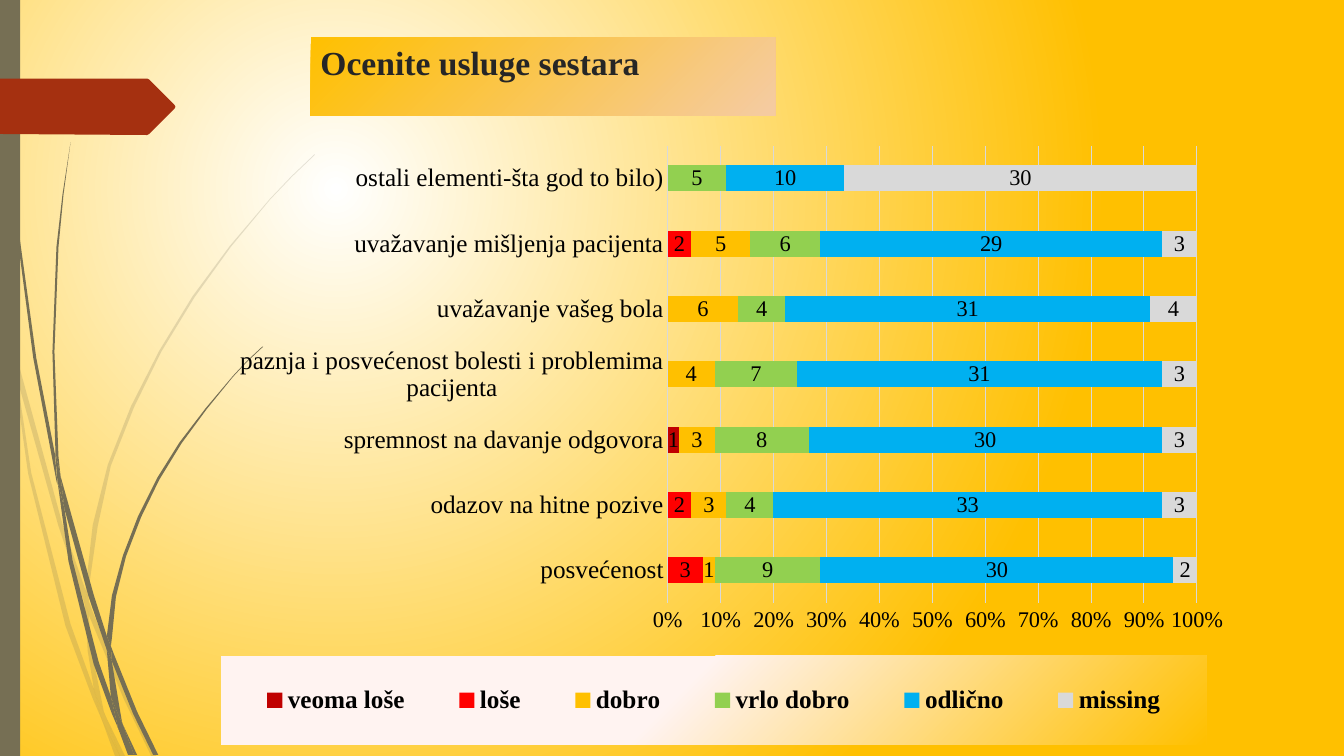
import pptx
import pptx.chart.data
import pptx.dml.color
import pptx.enum.chart
import pptx.enum.shapes
import pptx.enum.text
import pptx.oxml
import pptx.oxml.ns
import pptx.util

Inches, Pt, qn = pptx.util.Inches, pptx.util.Pt, pptx.oxml.ns.qn
RGB = pptx.dml.color.RGBColor.from_string
FONT = "Times New Roman"
COLORS = {
    "white": "FFFFFF", "gold": "FFC000", "peach": "F5CBA0", "olive": "766F54", "rust": "A53010",
    "heading": "262626", "text": "000000", "grid": "D9D9D9", "blush": "FFF3F1",
    "veoma loše": "C00000", "loše": "FF0000", "dobro": "FFC000",
    "vrlo dobro": "92D050", "odlično": "00B0F0", "missing": "D9D9D9",
}


def set_circle_gradient(fill, parent, inner, start, outer, center):
    """Radial gradient from the inner to the outer colour; center is l, t, r, b in percent."""
    fill.gradient()
    for stop, color, position in zip(fill.gradient_stops, (inner, outer), (start, 1)):
        stop.color.rgb = RGB(COLORS[color])
        stop.position = position
    gradient = parent.find(qn("a:gradFill"))
    left, top, right, bottom = (value * 1000 for value in center)
    gradient.replace(gradient.find(qn("a:lin")), pptx.oxml.parse_xml(
        f'<a:path {pptx.oxml.ns.nsdecls("a")} path="circle">'
        f'<a:fillToRect l="{left}" t="{top}" r="{right}" b="{bottom}"/></a:path>'))


def add_outline(shapes, points, color):
    """Closed filled outline through points in inches."""
    corners = [(Inches(x), Inches(y)) for x, y in points]
    builder = shapes.build_freeform(*corners[0], scale=1)
    builder.add_line_segments(corners[1:], close=True)
    shape = builder.convert_to_shape()
    shape.shadow.inherit = False
    shape.fill.solid()
    shape.fill.fore_color.rgb = RGB(COLORS[color])
    shape.line.fill.background()
    return shape


presentation = pptx.Presentation()
presentation.slide_width, presentation.slide_height = Inches(13.33), Inches(7.5)
slide = presentation.slides.add_slide(presentation.slide_layouts[6])

# Background
background_fill = slide.background.fill
set_circle_gradient(background_fill, slide.element.cSld.find(qn("p:bg")).find(qn("p:bgPr")),
                    "white", 0, "gold", (50, 50, 100, 100))

# Grass blades: pale group, then dark group
pale_blades = [
    [(0.11, 3.5), (0.09, 3.22), (0, 2.82), (0, 2.99), (0.1, 3.44)],
    [(0.58, 5.22), (0.84, 5.99), (0.85, 5.86), (0.62, 5.2), (0.14, 3.45), (0.17, 3.76)],
    [(0.92, 6.07), (0.88, 5.96), (0.88, 6.1), (1.23, 6.94), (1.5, 7.5), (1.55, 7.5), (1.27, 6.92)],
    [(1.19, 7.5), (1.24, 7.5), (1.05, 7.11)],
    [(0.93, 6.83), (0.7, 6.19), (0.31, 4.69), (0.17, 3.76), (0.11, 3.5), (0.28, 4.7),
     (0.65, 6.21), (0.92, 6.93), (1.01, 7.14), (0.99, 7.07)],
    [(0.84, 5.99), (0.87, 6.46), (0.93, 6.83), (0.96, 6.92), (1.05, 7.11), (1.03, 7.06),
     (0.91, 6.46), (0.88, 6.1), (0.88, 6.08)],
    [(0.88, 5.84), (0.97, 5.22), (1.1, 4.62), (1.33, 4.04), (1.6, 3.49), (1.93, 2.95),
     (2.29, 2.45), (2.68, 1.98), (2.9, 1.75), (3.12, 1.54), (3.12, 1.53), (2.89, 1.75),
     (2.68, 1.97), (2.28, 2.44), (1.91, 2.94), (1.58, 3.48), (1.3, 4.03), (1.07, 4.61),
     (0.92, 5.21), (0.85, 5.84), (0.85, 5.86), (0.88, 5.96)],
    [(1.01, 7.14), (1.14, 7.5), (1.19, 7.5)],
    [(0.88, 6.08), (0.88, 6.1), (0.88, 5.96), (0.85, 5.86), (0.84, 5.99)],
    [(0.96, 6.92), (0.93, 6.83), (0.99, 7.07), (1.01, 7.14), (1.19, 7.5), (1.05, 7.11)],
]
dark_blades = [
    [(0.07, 1.1), (0.17, 2.33), (0.33, 3.55), (0.56, 4.77), (0.57, 4.81), (0.55, 4.57),
     (0.55, 4.53), (0.36, 3.55), (0.19, 2.32), (0.08, 1.09), (0.05, 0.48), (0.04, 0),
     (0.03, 0), (0.04, 0.48)],
    [(0.88, 5.92), (1.06, 6.45), (1.06, 6.33), (1.06, 6.31), (0.93, 5.9), (0.6, 4.72),
     (0.64, 5.05)],
    [(1.13, 6.49), (1.1, 6.41), (1.11, 6.56), (1.32, 7.08), (1.52, 7.49), (1.57, 7.49),
     (1.36, 7.06)],
    [(1.1, 6.91), (0.98, 6.57), (0.72, 5.56), (0.64, 5.05), (0.57, 4.77), (0.68, 5.57),
     (0.93, 6.59), (1.11, 7.08), (1.17, 7.22), (1.16, 7.17)],
    [(0.6, 4.72), (0.58, 4.53), (0.54, 3.49), (0.58, 2.45), (0.63, 1.93), (0.7, 1.41),
     (0.62, 1.93), (0.56, 2.45), (0.52, 3.49), (0.55, 4.49)],
    [(1.33, 7.49), (1.36, 7.49), (1.22, 7.19)],
    [(0.57, 4.77), (0.64, 5.05), (0.6, 4.72), (0.55, 4.49), (0.55, 4.53)],
    [(1.11, 6.33), (1.15, 5.92), (1.25, 5.52), (1.4, 5.13), (1.58, 4.76), (1.8, 4.4),
     (2.05, 4.06), (2.31, 3.74), (2.45, 3.59), (2.61, 3.44), (2.6, 3.44), (2.45, 3.58),
     (2.31, 3.73), (2.04, 4.05), (1.78, 4.39), (1.56, 4.74), (1.37, 5.12), (1.22, 5.51),
     (1.11, 5.91), (1.06, 6.31), (1.1, 6.41)],
    [(1.17, 7.22), (1.27, 7.49), (1.31, 7.49)],
    [(1.06, 6.45), (1.1, 6.91), (1.16, 7.06), (1.22, 7.19), (1.21, 7.16), (1.11, 6.56),
     (1.09, 6.51)],
    [(1.06, 6.45), (1.09, 6.51), (1.11, 6.56), (1.1, 6.41), (1.06, 6.31), (1.06, 6.33)],
    [(1.16, 7.06), (1.1, 6.91), (1.16, 7.17), (1.17, 7.22), (1.3, 7.49), (1.33, 7.49),
     (1.22, 7.19)],
]
for blades, opacity in ((pale_blades, 20), (dark_blades, 100)):
    group = slide.shapes.add_group_shape()
    for points in blades:
        blade = add_outline(group.shapes, points, "olive")
        if opacity < 100:
            color = blade.fill._xPr.find(qn("a:solidFill")).find(qn("a:srgbClr"))
            color.append(pptx.oxml.parse_xml(
                f'<a:alpha {pptx.oxml.ns.nsdecls("a")} val="{opacity * 1000}"/>'))

# Side bar and arrow tab
bar = slide.shapes.add_shape(pptx.enum.shapes.MSO_SHAPE.RECTANGLE, 0, 0, Inches(0.2), Inches(7.5))
bar.shadow.inherit = False
bar.fill.solid()
bar.fill.fore_color.rgb = RGB(COLORS["olive"])
bar.line.fill.background()
add_outline(slide.shapes, [(0, 0.78), (1.46, 0.78), (1.48, 0.79), (1.73, 1.04), (1.74, 1.06),
                           (1.73, 1.08), (1.48, 1.33), (1.46, 1.34), (0, 1.33)], "rust")

# Title
title = slide.shapes.add_textbox(Inches(3.08), Inches(0.37), Inches(4.61), Inches(0.78))
set_circle_gradient(title.fill, title.element.spPr, "peach", 0.02, "gold", (100, 100, 0, 0))
title.text_frame.word_wrap = True
title.text_frame.vertical_anchor = pptx.enum.text.MSO_ANCHOR.TOP
paragraph = title.text_frame.paragraphs[0]
paragraph.text = "Ocenite usluge sestara"
paragraph.font.name, paragraph.font.size, paragraph.font.bold = FONT, Pt(24), True
paragraph.font.color.rgb = RGB(COLORS["heading"])

# Chart of ratings
ratings = pptx.chart.data.CategoryChartData()
ratings.categories = [
    "posvećenost", "odazov na hitne pozive", "spremnost na davanje odgovora",
    "paznja i posvećenost bolesti i problemima pacijenta", "uvažavanje vašeg bola",
    "uvažavanje mišljenja pacijenta", "ostali elementi-šta god to bilo)"]
for name, values in {
    "veoma loše": (None, None, 1, None, None, None, None),
    "loše": (3, 2, None, None, None, 2, None),
    "dobro": (1, 3, 3, 4, 6, 5, None),
    "vrlo dobro": (9, 4, 8, 7, 4, 6, 5),
    "odlično": (30, 33, 30, 31, 31, 29, 10),
    "missing": (2, 3, 3, 3, 4, 3, 30),
}.items():
    ratings.add_series(name, values)
chart = slide.shapes.add_chart(
    pptx.enum.chart.XL_CHART_TYPE.BAR_STACKED_100,
    Inches(1.75), Inches(1.29), Inches(10.5), Inches(6.21), ratings).chart
chart.has_title = False
chart.has_legend = True
legend = chart.legend
legend.position = pptx.enum.chart.XL_LEGEND_POSITION.BOTTOM
legend.include_in_layout = False
legend.font.bold = True
plot = chart.plots[0]
plot.gap_width, plot.overlap, plot.vary_by_categories = 150, 100, False
label_fonts = []
for series in plot.series:
    series.format.fill.solid()
    series.format.fill.fore_color.rgb = RGB(COLORS[series.name])
    labels = series.data_labels
    labels.show_value = True
    labels.position = pptx.enum.chart.XL_LABEL_POSITION.CENTER
    label_fonts.append(labels.font)

# Axes and chart fonts
category_axis, value_axis = chart.category_axis, chart.value_axis
for axis in (category_axis, value_axis):
    axis.major_tick_mark = axis.minor_tick_mark = pptx.enum.chart.XL_TICK_MARK.NONE
category_axis.has_major_gridlines = False
value_axis.has_major_gridlines = True
value_axis.minimum_scale, value_axis.maximum_scale, value_axis.major_unit = 0, 1, 0.1
value_axis.tick_labels.number_format = "0%"
value_axis.tick_labels.number_format_is_linked = False
value_axis.format.line.fill.background()
for line in (category_axis.format.line, value_axis.major_gridlines.format.line):
    line.color.rgb = RGB(COLORS["grid"])
    line.width = Pt(0.75)
small_fonts = [chart.font, value_axis.tick_labels.font, *label_fonts]
large_fonts = [category_axis.tick_labels.font, legend.font]
for fonts, size in ((small_fonts, 16), (large_fonts, 18)):
    for font in fonts:
        font.name, font.size = FONT, Pt(size)
        font.color.rgb = RGB(COLORS["text"])

# Places of the plot and the legend
plot_area = chart.element.chart.plotArea
legend_element = chart.element.chart.find(qn("c:legend"))
for element, index, target, box in (
        (plot_area, 0, '<c:layoutTarget val="inner"/>', (0.464, 0.025, 0.5, 0.731)),
        (legend_element, 1, "", (0.042, 0.84, 0.931, 0.142))):
    for layout in element.findall(qn("c:layout")):
        element.remove(layout)
    sides = "".join(f'<c:{side} val="{value}"/>' for side, value in zip("xywh", box))
    element.insert(index, pptx.oxml.parse_xml(
        f'<c:layout {pptx.oxml.ns.nsdecls("c")}><c:manualLayout>{target}<c:xMode val="edge"/>'
        f'<c:yMode val="edge"/>{sides}</c:manualLayout></c:layout>'))

# Legend gradient
stops = "".join(f'<a:gs pos="{position * 1000}"><a:srgbClr val="{COLORS[color]}"/></a:gs>'
                for position, color in ((0, "blush"), (46, "blush"), (100, "gold")))
legend_element.find(qn("c:overlay")).addnext(pptx.oxml.parse_xml(
    f'<c:spPr {pptx.oxml.ns.nsdecls("c", "a")}><a:gradFill><a:gsLst>{stops}</a:gsLst>'
    '<a:lin ang="2700000" scaled="0"/></a:gradFill></c:spPr>'))

presentation.save("out.pptx")
